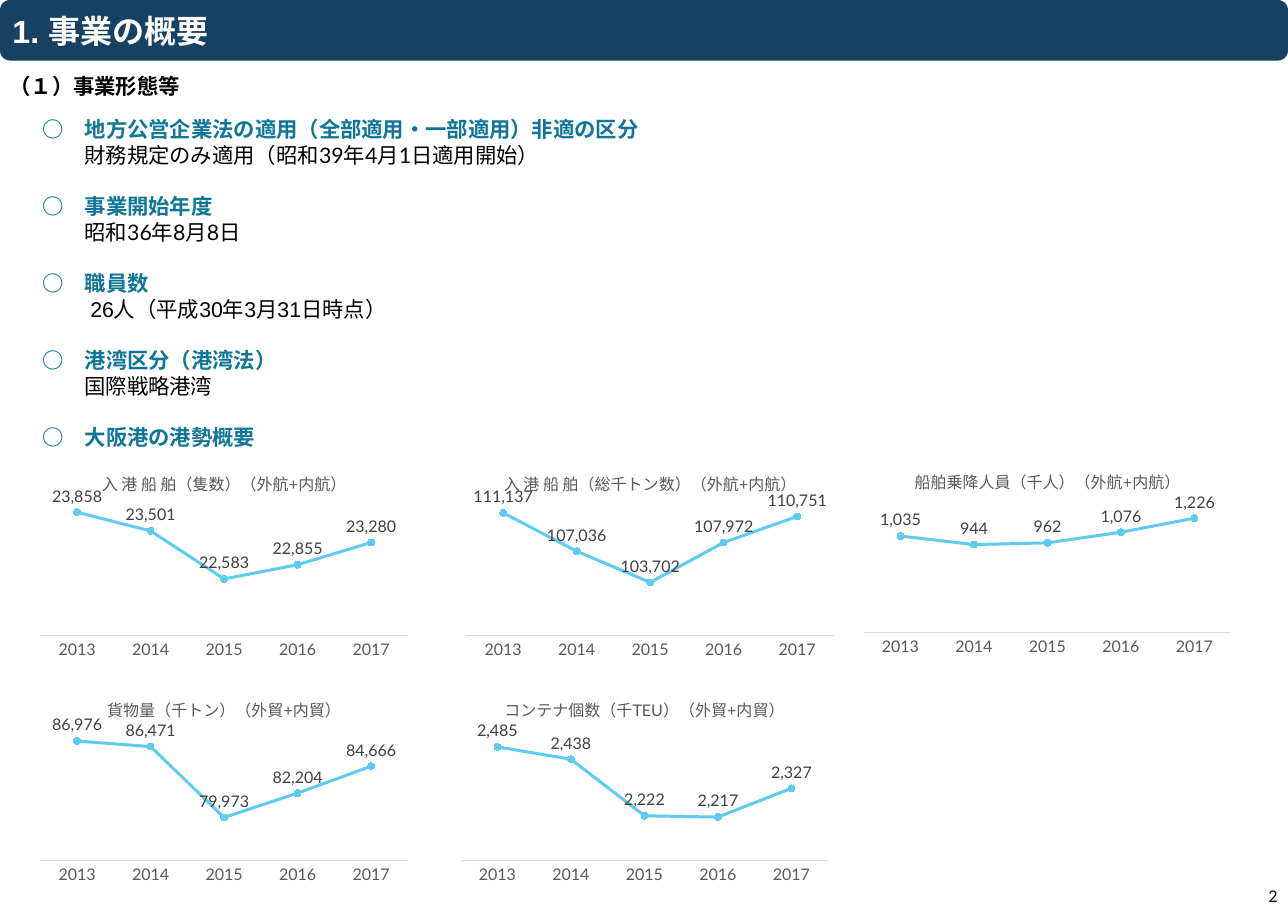
from dataclasses import dataclass

from pptx import Presentation
from pptx.chart.data import CategoryChartData
from pptx.dml.color import RGBColor
from pptx.enum.chart import XL_CHART_TYPE, XL_LABEL_POSITION, XL_MARKER_STYLE, XL_TICK_MARK
from pptx.enum.shapes import MSO_SHAPE
from pptx.enum.text import MSO_ANCHOR, MSO_AUTO_SIZE, PP_ALIGN
from pptx.util import Inches, Pt

LINE_MARKERS = XL_CHART_TYPE.LINE_MARKERS
LABEL_ABOVE = XL_LABEL_POSITION.ABOVE
CIRCLE = XL_MARKER_STYLE.CIRCLE
NO_TICK = XL_TICK_MARK.NONE
ROUNDED = MSO_SHAPE.ROUNDED_RECTANGLE
TOP, MIDDLE = MSO_ANCHOR.TOP, MSO_ANCHOR.MIDDLE
NO_AUTOSIZE = MSO_AUTO_SIZE.NONE
LEFT, RIGHT = PP_ALIGN.LEFT, PP_ALIGN.RIGHT

COLORS = {
    "navy": "174162", "teal": "0F7698", "sky": "5FCBEF", "white": "FFFFFF",
    "black": "000000", "label": "404040", "gray": "595959", "axis": "D9D9D9",
}
FONT = "Lato"
YEARS = ["2013", "2014", "2015", "2016", "2017"]
CHART_WIDTH, CHART_HEIGHT = 3.98, 2.13
NUMBER_FORMAT = "#,##0"


@dataclass(frozen=True)
class Topic:
    heading: str
    detail: str = ""
    font: str = FONT
    indent: float = 0.44


@dataclass(frozen=True)
class Trend:
    title: str
    left: float
    top: float
    values: tuple[int, ...]
    low: int
    high: int


TOPICS = [
    Topic("地方公営企業法の適用（全部適用・一部適用）非適の区分",
          "財務規定のみ適用（昭和39年4月1日適用開始）"),
    Topic("事業開始年度", "昭和36年8月8日"),
    Topic("職員数", "26人（平成30年3月31日時点）", "Arial", 0.5),
    Topic("港湾区分（港湾法）", "国際戦略港湾"),
    Topic("大阪港の港勢概要"),
]
TRENDS = [
    Trend("入 港 船 舶（隻数）（外航+内航）", 0.34, 4.76,
          (23858, 23501, 22583, 22855, 23280), 21500, 24000),
    Trend("入 港 船 舶（総千トン数）（外航+内航）", 4.77, 4.76,
          (111137, 107036, 103702, 107972, 110751), 98000, 112000),
    Trend("貨物量（千トン）（外貿+内貿）", 0.34, 7.1,
          (86976, 86471, 79973, 82204, 84666), 76000, 88000),
    Trend("コンテナ個数（千TEU）（外貿+内貿）", 4.71, 7.1,
          (2485, 2438, 2222, 2217, 2327), 2050, 2550),
    Trend("船舶乗降人員（千人）（外航+内航）", 8.9, 4.73,
          (1035, 944, 962, 1076, 1226), 0, 1400),
]


def rgb(color: str) -> RGBColor:
    return RGBColor.from_string(COLORS[color])


def style_font(font, size: float, color: str, name: str = FONT, bold: bool = False) -> None:
    font.size, font.name, font.bold = Pt(size), name, bold
    font.color.rgb = rgb(color)


def write_text(paragraph, text: str, *, size: float = 16, color: str = "black",
               name: str = FONT, bold: bool = False, align=None) -> None:
    run = paragraph.add_run()
    run.text = text
    style_font(run.font, size, color, name, bold)
    if align is not None:
        paragraph.alignment = align


def add_text_frame(slide, left: float, top: float, width: float, height: float, anchor=TOP):
    box = slide.shapes.add_textbox(Inches(left), Inches(top), Inches(width), Inches(height))
    frame = box.text_frame
    frame.word_wrap = True
    frame.vertical_anchor = anchor
    return frame


def add_title(slide) -> None:
    title = slide.shapes.title
    title.left = title.top = 0
    title.width, title.height = Inches(13.39), Inches(0.63)
    banner = slide.shapes.add_shape(ROUNDED, 0, 0, title.width, title.height)
    banner.shadow.inherit = False
    banner.fill.solid()
    banner.fill.fore_color.rgb = rgb("navy")
    banner.line.fill.background()
    title.element.addprevious(banner.element)

    frame = title.text_frame
    frame.auto_size = NO_AUTOSIZE
    frame.vertical_anchor = MIDDLE
    frame.margin_left = frame.margin_right = Inches(0.13)
    frame.margin_top = frame.margin_bottom = Inches(0.07)
    write_text(frame.paragraphs[0], "1. 事業の概要", size=24, color="white",
               name="Arial", bold=True, align=LEFT)


def add_topics(slide) -> None:
    frame = add_text_frame(slide, 0.34, 1.16, 12.09, 3.6)
    for number, topic in enumerate(TOPICS):
        heading = frame.add_paragraph() if number else frame.paragraphs[0]
        heading.space_before = Pt(19.2 if number else 0)
        write_text(heading, "○　" + topic.heading, color="teal", bold=True)
        if topic.detail:
            detail = frame.add_paragraph()
            detail._p.get_or_add_pPr().set("marL", str(Inches(topic.indent)))
            write_text(detail, topic.detail, name=topic.font)


def add_trend(slide, trend: Trend) -> None:
    data = CategoryChartData(number_format=NUMBER_FORMAT)
    data.categories = YEARS
    data.add_series("Series 1", trend.values)
    chart = slide.shapes.add_chart(
        LINE_MARKERS, Inches(trend.left), Inches(trend.top),
        Inches(CHART_WIDTH), Inches(CHART_HEIGHT), data).chart
    style_font(chart.font, 10, "black")
    chart.has_legend = False
    chart.has_title = True
    chart.chart_title.include_in_layout = False
    write_text(chart.chart_title.text_frame.paragraphs[0], trend.title, size=12, color="gray")

    # Axes
    years, amounts = chart.category_axis, chart.value_axis
    years.major_tick_mark = years.minor_tick_mark = NO_TICK
    style_font(years.tick_labels.font, 12, "gray")
    years.format.line.color.rgb = rgb("axis")
    years.format.line.width = Pt(0.75)
    amounts.minimum_scale, amounts.maximum_scale = trend.low, trend.high
    amounts.has_major_gridlines = False
    amounts.visible = False

    # Line, markers and value labels
    plot = chart.plots[0]
    plot.vary_by_categories = False
    series = plot.series[0]
    series.smooth = False
    series.format.line.color.rgb = rgb("sky")
    series.format.line.width = Pt(2.25)
    marker = series.marker
    marker.style, marker.size = CIRCLE, 5
    marker.format.fill.solid()
    marker.format.fill.fore_color.rgb = rgb("sky")
    marker.format.line.color.rgb = rgb("sky")
    labels = series.data_labels
    labels.show_value = True
    labels.position = LABEL_ABOVE
    labels.number_format = NUMBER_FORMAT
    labels.number_format_is_linked = False
    style_font(labels.font, 12, "label")


def main() -> None:
    deck = Presentation()
    deck.slide_width, deck.slide_height = Inches(13.39), Inches(9.45)
    slide = deck.slides.add_slide(deck.slide_layouts[5])

    # Heading and business outline
    add_title(slide)
    add_topics(slide)
    section = add_text_frame(slide, 0, 0.71, 2.29, 0.37)
    write_text(section.paragraphs[0], "（１）事業形態等", bold=True)

    # Port statistics
    for trend in TRENDS:
        add_trend(slide, trend)

    # Page number
    page = add_text_frame(slide, 12.63, 9.18, 0.75, 0.27, MIDDLE)
    write_text(page.paragraphs[0], "2", size=12, align=RIGHT)

    deck.save("out.pptx")


if __name__ == "__main__":
    main()
